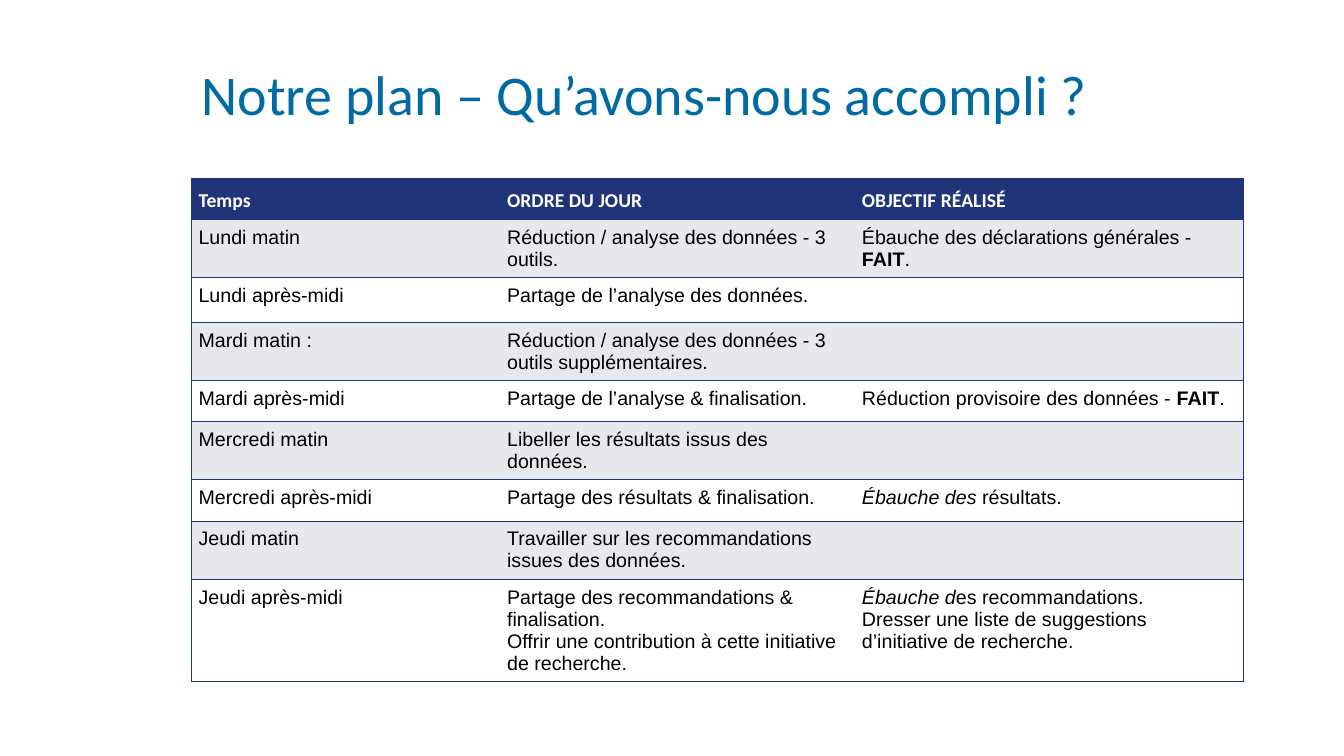
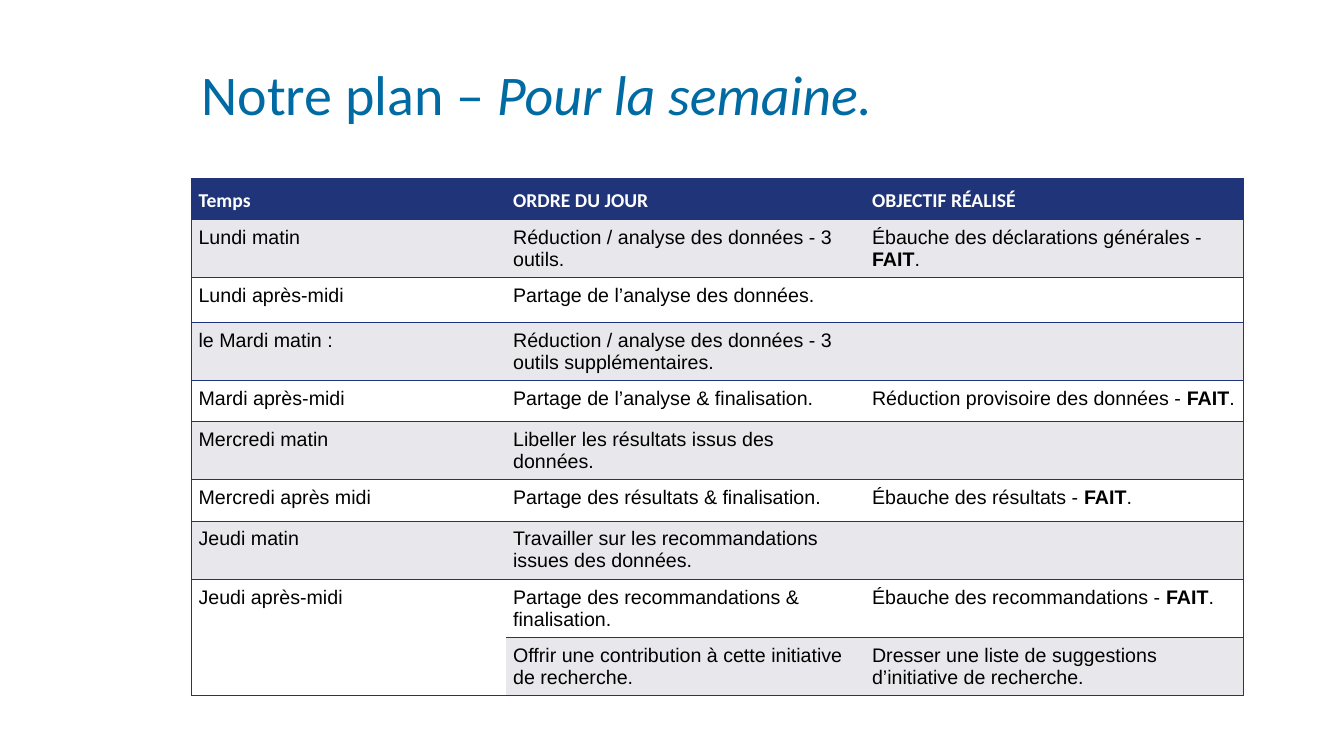
import pptx
import pptx.dml.color
import pptx.enum.text
import pptx.util
from dataclasses import dataclass
from lxml import etree
from pptx.util import Inches

NAVY, BLUE, GREY, WHITE, BLACK = "1F3479", "006BA3", "E8E8EC", "FFFFFF", "000000"
LEFT, WIDTH = 1.9, 10.43
TABLE_TOP = 1.77
INSET = 0.07
ONE_LINE, TWO_LINES, FOUR_LINES = 0.41, 0.57, 1.01
ANCHOR = pptx.enum.text.MSO_ANCHOR
DRAWING_NS = "http://schemas.openxmlformats.org/drawingml/2006/main"


@dataclass(frozen=True)
class Run:
    text: str
    bold: bool = False
    italic: bool = False


@dataclass(frozen=True)
class Plan:
    title: list
    widths: list
    heights: list
    times: list
    agenda: list
    goals: list
    merge_last_time: bool = False


# Wording shared by both plans
HEADERS = ["Temps", "ORDRE DU JOUR", "OBJECTIF RÉALISÉ"]
DONE = [Run("FAIT", bold=True), Run(".")]
FIRST_GOALS = [
    [[Run("Ébauche des déclarations générales - "), *DONE]], [], [],
    [[Run("Réduction provisoire des données - "), *DONE]], [],
]
AGENDA = [
    ["Réduction / analyse des données - 3 outils."],
    ["Partage de l’analyse des données."],
    ["Réduction / analyse des données - 3 outils supplémentaires."],
    ["Partage de l’analyse & finalisation."],
    ["Libeller les résultats issus des données."],
    ["Partage des résultats & finalisation."],
    ["Travailler sur les recommandations issues des données."],
]
SHARE = "Partage des recommandations & finalisation."
OFFER = "Offrir une contribution à cette initiative de recherche."
SUGGEST = "Dresser une liste de suggestions d’initiative de recherche."
HEIGHTS = [ONE_LINE, TWO_LINES, 0.44, TWO_LINES, ONE_LINE,
           TWO_LINES, ONE_LINE, TWO_LINES]

PLANS = [
    Plan(
        title=["Notre plan – Qu’avons-nous accompli ?"],
        widths=[3.06, 3.52, 3.85],
        heights=HEIGHTS + [FOUR_LINES],
        times=["Lundi matin", "Lundi après-midi", "Mardi matin :",
               "Mardi après-midi", "Mercredi matin", "Mercredi après-midi",
               "Jeudi matin", "Jeudi après-midi"],
        agenda=AGENDA + [[SHARE, OFFER]],
        goals=FIRST_GOALS + [
            [[Run("Ébauche des ", italic=True), Run("résultats.")]], [],
            [[Run("Ébauche d", italic=True), Run("es recommandations.")], SUGGEST],
        ],
    ),
    Plan(
        title=[[Run("Notre plan –"), Run(" Pour la semaine.", italic=True)]],
        widths=[3.12, 3.56, 3.75],
        heights=HEIGHTS + [TWO_LINES, TWO_LINES],
        times=["Lundi matin", "Lundi après-midi", "le Mardi matin :",
               "Mardi après-midi", "Mercredi matin", "Mercredi après midi",
               "Jeudi matin", "Jeudi après-midi", ""],
        agenda=AGENDA + [[SHARE], [OFFER]],
        goals=FIRST_GOALS + [
            [[Run("Ébauche des résultats - "), *DONE]], [],
            [[Run("Ébauche des recommandations - "), *DONE]], [SUGGEST],
        ],
        merge_last_time=True,
    ),
]


def rgb(value: str) -> pptx.dml.color.RGBColor:
    return pptx.dml.color.RGBColor.from_string(value)


def write(tf, paragraphs: list, *, size: float, font: str, color: str,
          bold: bool = False, spacing: float = 1.0) -> None:
    """Fill a text frame; a paragraph is a string or a list of runs."""
    for i, content in enumerate(paragraphs or [[]]):
        p = tf.paragraphs[0] if i == 0 else tf.add_paragraph()
        p.alignment = pptx.enum.text.PP_ALIGN.LEFT
        p.line_spacing = spacing
        p.font.size = pptx.util.Pt(size)
        for part in [Run(content)] if isinstance(content, str) else content:
            r = p.add_run()
            r.text = part.text
            r.font.size = pptx.util.Pt(size)
            r.font.name = font
            r.font.color.rgb = rgb(color)
            r.font.bold = bold or part.bold
            r.font.italic = part.italic


def set_borders(cell, sides: str) -> None:
    """Draw a navy line on the given sides (L, R, T, B) and clear the others."""
    props = cell._tc.get_or_add_tcPr()
    for side in "LRTB":
        line = etree.SubElement(props, f"{{{DRAWING_NS}}}ln{side}", w="12700")
        if side in sides:
            fill = etree.SubElement(line, f"{{{DRAWING_NS}}}solidFill")
            etree.SubElement(fill, f"{{{DRAWING_NS}}}srgbClr", val=NAVY)
        else:
            etree.SubElement(line, f"{{{DRAWING_NS}}}noFill")


def format_cell(cell, fill: str, sides: str) -> None:
    set_borders(cell, sides)
    cell.fill.solid()
    cell.fill.fore_color.rgb = rgb(fill)
    cell.margin_left = cell.margin_right = Inches(INSET)
    cell.margin_top = cell.margin_bottom = Inches(INSET)


def add_title(s, paragraphs: list) -> None:
    sp = s.shapes.title
    sp.left, sp.top = Inches(LEFT), Inches(0.12)
    sp.width, sp.height = Inches(WIDTH), Inches(1.2)
    tf = sp.text_frame
    tf.word_wrap = True
    tf.auto_size = pptx.enum.text.MSO_AUTO_SIZE.NONE
    tf.vertical_anchor = ANCHOR.BOTTOM
    write(tf, paragraphs, size=40, font="Calibri", color=BLUE, spacing=0.9)


def add_plan_table(s, plan: Plan) -> None:
    rows = [[[header] for header in HEADERS]]
    rows += [[[time] if time else [], agenda, goal]
             for time, agenda, goal in zip(plan.times, plan.agenda, plan.goals)]
    table = s.shapes.add_table(
        len(rows), len(HEADERS), Inches(LEFT), Inches(TABLE_TOP),
        Inches(WIDTH), Inches(sum(plan.heights))).table
    table.first_row = table.horz_banding = False
    for column, width in zip(table.columns, plan.widths):
        column.width = Inches(width)
    for row, height in zip(table.rows, plan.heights):
        row.height = Inches(height)

    # Header row, then alternating grey and white rows
    for i, row in enumerate(rows):
        for j, paragraphs in enumerate(row):
            cell = table.cell(i, j)
            merged_time = plan.merge_last_time and j == 0 and i == len(rows) - 1
            fill = NAVY if i == 0 else GREY if i % 2 and not merged_time else WHITE
            format_cell(cell, fill, ("L", "", "R")[j] + "TB")
            if i == 0:
                cell.vertical_anchor = ANCHOR.BOTTOM
                write(cell.text_frame, paragraphs, size=14, font="Calibri",
                      color=WHITE, bold=True)
            else:
                write(cell.text_frame, paragraphs, size=14, font="Arial",
                      color=BLACK)
    if plan.merge_last_time:
        table.cell(len(rows) - 2, 0).merge(table.cell(len(rows) - 1, 0))


def main() -> None:
    prs = pptx.Presentation()
    prs.slide_width, prs.slide_height = Inches(13.33), Inches(7.5)
    for plan in PLANS:
        s = prs.slides.add_slide(prs.slide_layouts[5])
        add_title(s, plan.title)
        add_plan_table(s, plan)
    prs.save("out.pptx")


if __name__ == "__main__":
    main()
